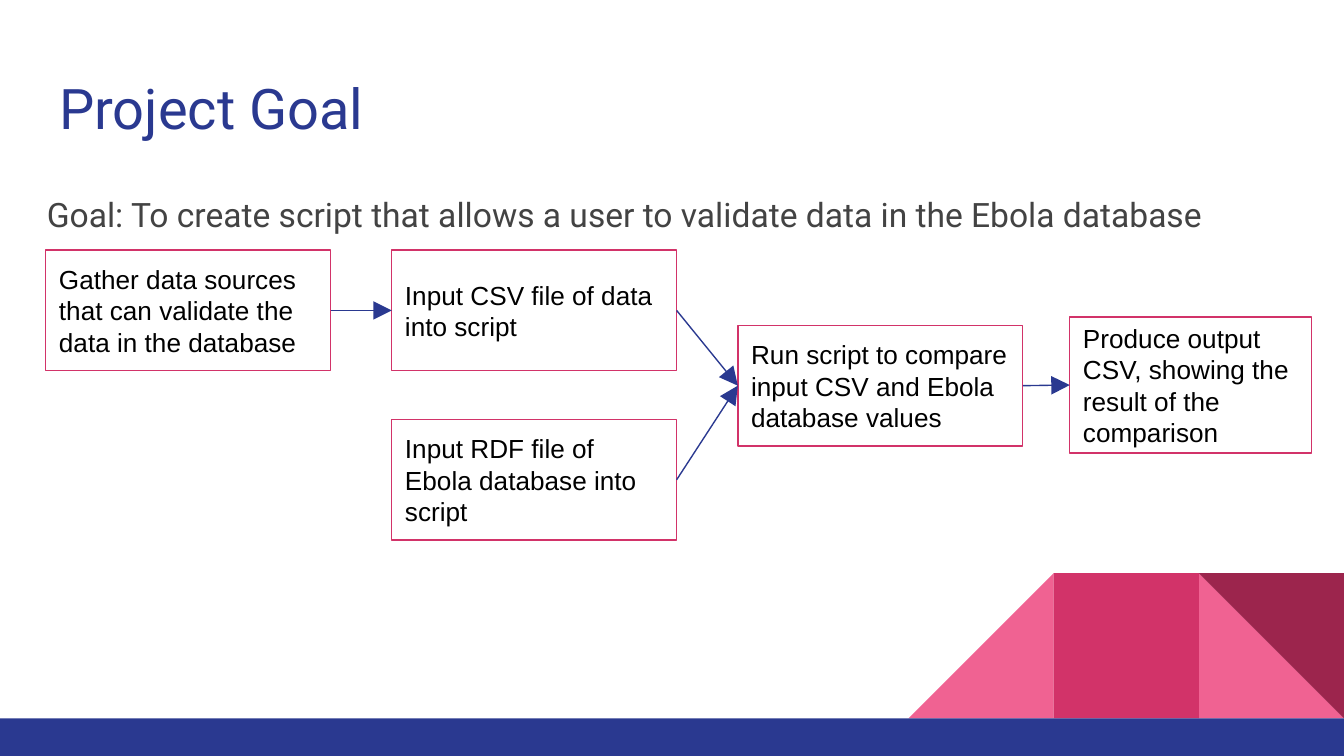
from dataclasses import dataclass

from pptx import Presentation
from pptx.dml.color import RGBColor
from pptx.enum import shapes as sh, text as tx
from pptx.oxml import xmlchemy as xc
from pptx.util import Inches, Pt


@dataclass(frozen=True)
class Theme:
    navy: str = "2A3990"
    rose: str = "D23369"
    pink: str = "F06292"
    wine: str = "9C254D"
    white: str = "FFFFFF"
    black: str = "000000"
    gray: str = "434343"
    head: str = "Roboto"
    body: str = "Arial"
    title: int = 30
    goal: int = 18
    step: int = 14
    line: float = 0.75


T = Theme()
KIND = sh.MSO_SHAPE
LEFT, RIGHT = 1, 3
WIDE = 10
HIGH = WIDE * 9 / 16


def rgb(code):
    return RGBColor.from_string(code)


def write(shape, words, font, size, color, anchor):
    frame = shape.text_frame
    frame.text = words
    frame.word_wrap = True
    frame.auto_size = tx.MSO_AUTO_SIZE.NONE
    frame.vertical_anchor = anchor
    frame.margin_left = frame.margin_right = Inches(0.1)
    frame.margin_top = frame.margin_bottom = Inches(0.1)
    para = frame.paragraphs[0]
    para.alignment = tx.PP_ALIGN.LEFT
    for run in para.runs:
        run.font.name = font
        run.font.size = Pt(size)
        run.font.color.rgb = rgb(color)
    return para


def block(slide, kind, box, fill, line=None):
    shape = slide.shapes.add_shape(kind, *map(Inches, box))
    shape.shadow.inherit = False
    shape.fill.solid()
    shape.fill.fore_color.rgb = rgb(fill)
    if line:
        shape.line.color.rgb = rgb(line)
        shape.line.width = Pt(T.line)
    else:
        shape.line.fill.background()
    return shape


def arrow(slide, start, end):
    link = slide.shapes.add_connector(sh.MSO_CONNECTOR.STRAIGHT, 0, 0, 0, 0)
    link.begin_connect(start, RIGHT)
    link.end_connect(end, LEFT)
    link.line.color.rgb = rgb(T.navy)
    link.line.width = Pt(T.line)
    tip = xc.OxmlElement("a:tailEnd")
    for key, value in (("type", "triangle"), ("w", "lg"), ("len", "lg")):
        tip.set(key, value)
    props = link._element.spPr
    props.get_or_add_ln().append(tip)
    props.append(xc.OxmlElement("a:effectLst"))


def decor(slide, box):
    left, top, wide, high = box
    bar = 0.28
    side = 1.08
    base = top + high - bar
    tiles = [
        (KIND.RIGHT_TRIANGLE, 1, T.pink, False, 0),
        (KIND.RIGHT_TRIANGLE, 3, T.pink, True, 0),
        (KIND.RECTANGLE, 2, T.rose, False, 0),
        (KIND.RIGHT_TRIANGLE, 1, T.wine, False, 180),
    ]
    for kind, col, fill, flip, turn in tiles:
        spot = (left + wide - col * side, base - side, side, side)
        tile = block(slide, kind, spot, fill)
        tile.rotation = turn
        if flip:
            tile._element.spPr.xfrm.set("flipH", "1")
    block(slide, KIND.RECTANGLE, (left, base, wide, bar), T.navy)


def title(slide, box):
    head = slide.shapes.title
    head.left, head.top, head.width, head.height = map(Inches, box)
    write(head, "Project Goal", T.head, T.title, T.navy, tx.MSO_ANCHOR.TOP)


def flow(slide, box):
    left, top, wide, high = box
    width, tall = 2.12, 0.9
    third = 5.15
    second = third / 2
    last = 1.8
    steps = {
        "gather": (0, 0, width, tall,
                   "Gather data sources that can validate the data in the database"),
        "csv": (second, 0, width, tall, "Input CSV file of data into script"),
        "rdf": (second, high - tall, width, tall,
                "Input RDF file of Ebola database into script"),
        "run": (third, 0.56, width, tall,
                "Run script to compare input CSV and Ebola database values"),
        "out": (wide - last, 0.5, last, 1.01,
                "Produce output CSV, showing the result of the comparison"),
    }
    nodes = {}
    for name, (x, y, w, h, words) in steps.items():
        spot = (left + x, top + y, w, h)
        node = block(slide, KIND.RECTANGLE, spot, T.white, T.rose)
        write(node, words, T.body, T.step, T.black, tx.MSO_ANCHOR.MIDDLE)
        nodes[name] = node
    links = [("gather", "csv"), ("csv", "run"), ("rdf", "run"), ("run", "out")]
    for start, end in links:
        arrow(slide, nodes[start], nodes[end])


def goal(slide, box):
    note = slide.shapes.add_textbox(*map(Inches, box))
    words = "Goal: To create script that allows a user to validate data in the Ebola database"
    para = write(note, words, T.head, T.goal, T.gray, tx.MSO_ANCHOR.MIDDLE)
    para.line_spacing = 1.15
    para.space_after = Pt(16)


def main():
    deck = Presentation()
    deck.slide_width, deck.slide_height = Inches(WIDE), Inches(HIGH)
    slide = deck.slides.add_slide(deck.slide_layouts[5])
    decor(slide, (0, 0, WIDE, HIGH))
    title(slide, (0.34, 0.45, 9.32, 0.66))
    flow(slide, (0.34, 1.86, 9.42, 2.16))
    goal(slide, (0.25, 1.29, 9.03, 0.56))
    deck.save("out.pptx")


if __name__ == "__main__":
    main()
